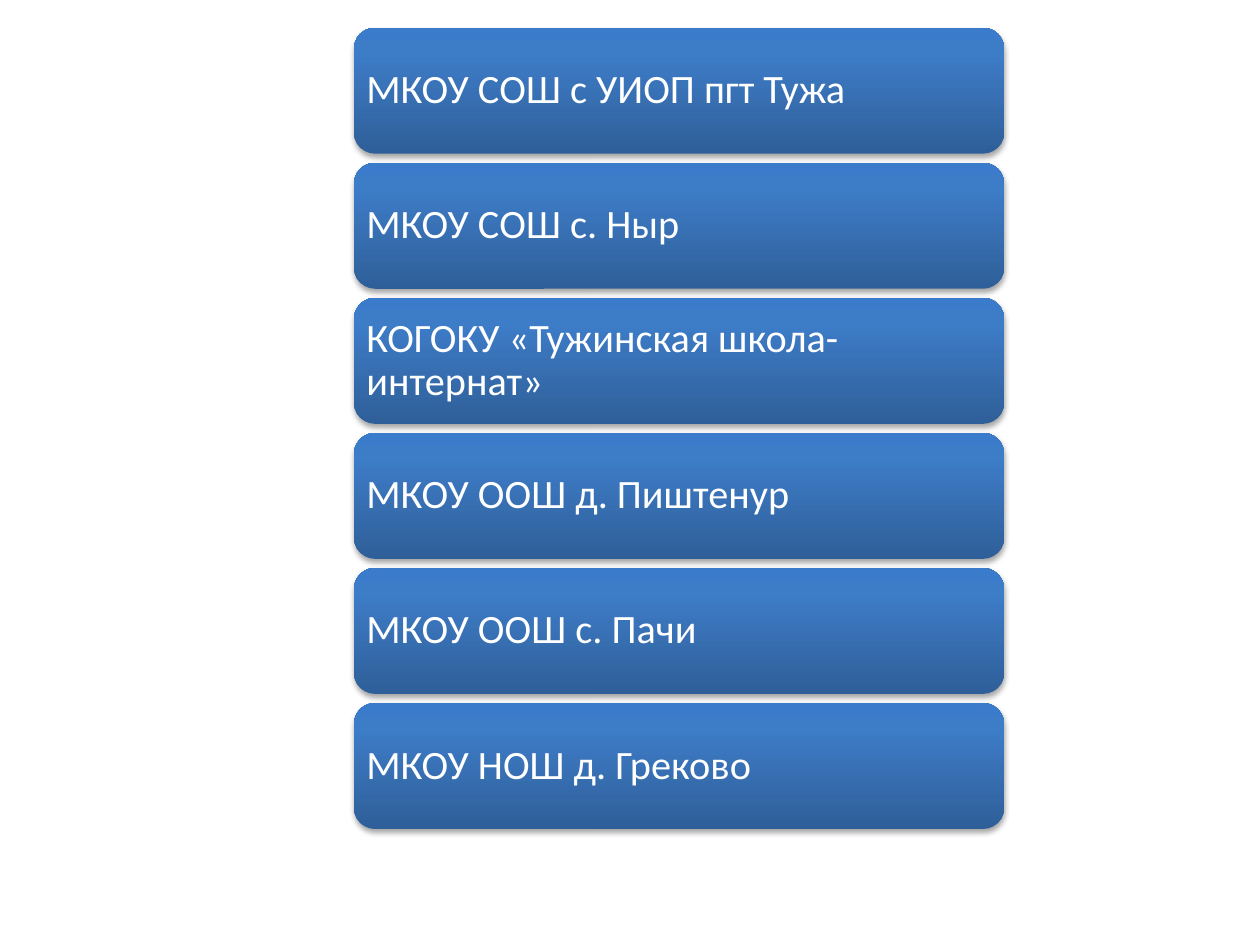
from dataclasses import dataclass

from lxml.etree import SubElement
from pptx import Presentation
from pptx.dml.color import RGBColor
from pptx.enum.shapes import MSO_SHAPE as Shape
from pptx.enum.text import MSO_ANCHOR as Anchor, PP_ALIGN as Align
from pptx.oxml import parse_xml
from pptx.oxml.ns import nsdecls, qn
from pptx.util import Inches, Pt

SCHOOLS = [
    "МКОУ СОШ с УИОП пгт Тужа",
    "МКОУ СОШ с. Ныр",
    "КОГОКУ «Тужинская школа-интернат»",
    "МКОУ ООШ д. Пиштенур",
    "МКОУ ООШ с. Пачи",
    "МКОУ НОШ д. Греково",
]


@dataclass(frozen=True)
class Theme:
    font: str = "Calibri"
    text_size: float = 23
    text_color: str = "FFFFFF"
    gradient: tuple = ((0, "2F5F99"), (80, "3D7CC7"), (100, "3A7CCB"))
    shadow_color: str = "000000"
    shadow_opacity: int = 35


@dataclass(frozen=True)
class Column:
    """One column of equal rows, in inches."""
    left: float = 2.81
    top: float = 0.22
    width: float = 5.16
    row_height: float = 1.0
    gap: float = 0.072

    def row(self, index):
        top = self.top + index * (self.row_height + self.gap)
        return [Inches(n) for n in (self.left, top, self.width, self.row_height)]


class SlideBuilder:
    def __init__(self, slide, theme, column):
        self.slide = slide
        self.theme = theme
        self.column = column

    def card(self, index, text):
        shape = self.slide.shapes.add_shape(
            Shape.ROUNDED_RECTANGLE, *self.column.row(index))
        shape.line.fill.background()
        self._fill_gradient(shape)
        self._drop_shadow(shape)
        self._write(shape.text_frame, text)

    def _fill_gradient(self, shape):
        """Run the theme's stops from the bottom edge to the top edge."""
        shape.fill.gradient()
        shape.fill.gradient_angle = 90
        stops = shape._element.spPr.find(qn("a:gradFill")).find(qn("a:gsLst"))
        for stop in list(stops):
            stops.remove(stop)
        for percent, color in self.theme.gradient:
            stop = SubElement(stops, qn("a:gs"), pos=str(percent * 1000))
            SubElement(stop, qn("a:srgbClr"), val=color)

    def _drop_shadow(self, shape):
        shape.shadow.inherit = False
        effects = shape._element.spPr.find(qn("a:effectLst"))
        effects.append(parse_xml(
            f'<a:outerShdw {nsdecls("a")} blurRad="{Pt(3.1)}" dist="{Pt(1.8)}"'
            f' dir="5400000" rotWithShape="0">'
            f'<a:srgbClr val="{self.theme.shadow_color}">'
            f'<a:alpha val="{self.theme.shadow_opacity * 1000}"/>'
            f'</a:srgbClr></a:outerShdw>'))

    def _write(self, frame, text):
        frame.text = text
        frame.word_wrap = True
        frame.vertical_anchor = Anchor.MIDDLE
        frame.margin_left = frame.margin_right = Inches(0.05)
        frame.margin_top = frame.margin_bottom = Inches(0.05)
        paragraph = frame.paragraphs[0]
        paragraph.alignment = Align.LEFT
        paragraph.line_spacing = 0.9
        font = paragraph.runs[0].font
        font.name = self.theme.font
        font.size = Pt(self.theme.text_size)
        font.color.rgb = RGBColor.from_string(self.theme.text_color)


def main():
    presentation = Presentation()
    presentation.slide_width = Inches(10)
    presentation.slide_height = Inches(7.5)
    blank_layout = presentation.slide_layouts[6]
    slide = presentation.slides.add_slide(blank_layout)
    builder = SlideBuilder(slide, Theme(), Column())
    for index, school in enumerate(SCHOOLS):
        builder.card(index, school)
    presentation.save("out.pptx")


if __name__ == "__main__":
    main()
